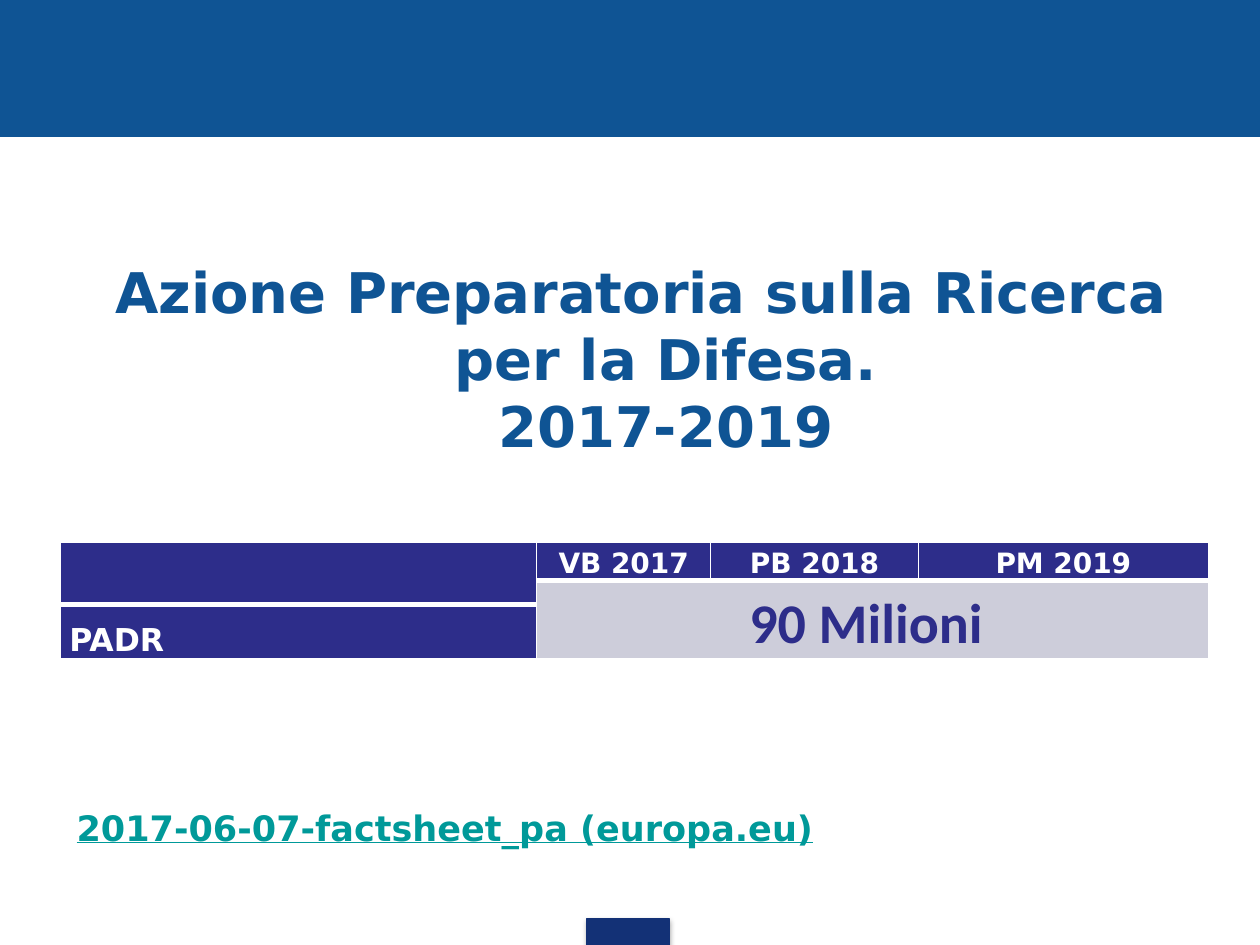
import pptx
import pptx.dml.color
import pptx.enum.shapes
import pptx.enum.text
import pptx.oxml
import pptx.oxml.ns
import pptx.util

Inches = pptx.util.Inches
Pt = pptx.util.Pt
RGBColor = pptx.dml.color.RGBColor
PP_ALIGN = pptx.enum.text.PP_ALIGN
MSO_ANCHOR = pptx.enum.text.MSO_ANCHOR

BLUE = RGBColor(0x0F, 0x54, 0x94)
NAVY = RGBColor(0x13, 0x31, 0x76)
INDIGO = RGBColor(0x2D, 0x2D, 0x8A)
LILAC = RGBColor(0xCD, 0xCD, 0xDA)
TEAL = RGBColor(0x00, 0x99, 0x99)
WHITE = RGBColor(0xFF, 0xFF, 0xFF)

HEADING_FONT = "DejaVu Sans"
AMOUNT_FONT = "Calibri"
NAMESPACE = pptx.oxml.ns.nsdecls("a")


class SlideBuilder:
    def __init__(self, slide):
        self.slide = slide

    def run(self, paragraph, text, size, color, font=HEADING_FONT, underline=None):
        run = paragraph.add_run()
        run.text = text
        run.font.name = font
        run.font.size = Pt(size)
        run.font.bold = True
        run.font.underline = underline
        run.font.color.rgb = color

    def block(self, left, top, width, height, color):
        block = self.slide.shapes.add_shape(
            pptx.enum.shapes.MSO_SHAPE.RECTANGLE,
            Inches(left), Inches(top), Inches(width), Inches(height))
        block.shadow.inherit = False
        block.fill.solid()
        block.fill.fore_color.rgb = color
        block.line.color.rgb = color
        block.line.width = Pt(0.75)
        return block

    def drop_shadow(self, block):
        effects = block._element.spPr.find(pptx.oxml.ns.qn("a:effectLst"))
        effects.append(pptx.oxml.parse_xml(
            f'<a:outerShdw {NAMESPACE} blurRad="{Pt(3.1)}" dist="{Pt(1.8)}" '
            'dir="5400000" rotWithShape="0"><a:srgbClr val="000000">'
            '<a:alpha val="35000"/></a:srgbClr></a:outerShdw>'))

    def title(self, lines, left, top, width, height):
        title = self.slide.shapes.title
        title.left, title.top = Inches(left), Inches(top)
        title.width, title.height = Inches(width), Inches(height)
        frame = title.text_frame
        frame.word_wrap = True
        frame.auto_size = pptx.enum.text.MSO_AUTO_SIZE.NONE
        frame.vertical_anchor = MSO_ANCHOR.MIDDLE
        paragraph = frame.paragraphs[0]
        paragraph.alignment = PP_ALIGN.CENTER
        hanging = paragraph._p.get_or_add_pPr()
        hanging.set("marL", str(Inches(0.39)))
        hanging.set("indent", str(-Inches(0.39)))
        for number, line in enumerate(lines):
            if number:
                paragraph.add_line_break()
            self.run(paragraph, line, 32, BLUE)

    def source(self, text, left, top, width, height):
        box = self.slide.shapes.add_textbox(
            Inches(left), Inches(top), Inches(width), Inches(height))
        box.text_frame.word_wrap = True
        self.run(box.text_frame.paragraphs[0], text, 20, TEAL, underline=True)

    def table(self, left, top, columns, rows):
        table = self.slide.shapes.add_table(
            len(rows), len(columns), Inches(left), Inches(top),
            Inches(sum(columns)), Inches(sum(rows))).table
        for column, width in zip(table.columns, columns):
            column.width = Inches(width)
        for row, height in zip(table.rows, rows):
            row.height = Inches(height)
        return table

    def cell_style(self, cell, color, top_width, bottom_width):
        cell.margin_left = cell.margin_right = Inches(0.07)
        cell.margin_top = cell.margin_bottom = 0
        cell.vertical_anchor = MSO_ANCHOR.BOTTOM
        borders = {"lnL": 1, "lnR": 1, "lnT": top_width, "lnB": bottom_width}
        for side, width in borders.items():
            cell._tc.get_or_add_tcPr().append(pptx.oxml.parse_xml(
                f'<a:{side} {NAMESPACE} w="{Pt(width)}"><a:solidFill>'
                f'<a:srgbClr val="{WHITE}"/></a:solidFill></a:{side}>'))
        cell.fill.solid()
        cell.fill.fore_color.rgb = color

    def cell_text(self, cell, text, size, color, align, font=HEADING_FONT):
        paragraph = cell.text_frame.paragraphs[0]
        paragraph.alignment = align
        paragraph.line_spacing = 1.15
        paragraph.space_after = Pt(10)
        self.run(paragraph, text, size, color, font)

    def shrink_empty(self, cell):
        """Keep an empty cell from forcing its row taller."""
        cell.text_frame.paragraphs[0]._p.append(
            pptx.oxml.parse_xml(f'<a:endParaRPr {NAMESPACE} sz="100"/>'))


def budget_table(builder):
    table = builder.table(0.48, 4.3, [3.78, 1.38, 1.65, 2.3], [0.29, 0.19, 0.43])
    for row in range(3):
        for column in range(4):
            is_amount = row > 0 and column > 0
            is_header_end = row == (1 if column == 0 else 0)
            is_body_start = row == (2 if column == 0 else 1)
            builder.cell_style(table.cell(row, column),
                               LILAC if is_amount else INDIGO,
                               3 if is_body_start else 1,
                               3 if is_header_end else 1)
    table.cell(0, 0).merge(table.cell(1, 0))
    table.cell(1, 1).merge(table.cell(2, 3))

    for column, year in enumerate(["VB 2017", "PB 2018", "PM 2019"], start=1):
        builder.cell_text(table.cell(0, column), year, 16, WHITE, PP_ALIGN.CENTER)
    builder.cell_text(table.cell(1, 1), "90 Milioni ", 32, INDIGO,
                      PP_ALIGN.CENTER, AMOUNT_FONT)
    builder.cell_text(table.cell(2, 0), "PADR", 18, WHITE, PP_ALIGN.LEFT)
    for cell in table.iter_cells():
        if not cell.text:
            builder.shrink_empty(cell)


def main():
    deck = pptx.Presentation()
    deck.slide_width, deck.slide_height = Inches(10), Inches(7.5)
    builder = SlideBuilder(deck.slides.add_slide(deck.slide_layouts[5]))

    builder.block(0, 0, 10, 1.08, BLUE)
    footer_tab = builder.block(4.66, 7.29, 0.65, 0.21, NAVY)
    builder.drop_shadow(footer_tab)
    builder.title(["Azione Preparatoria sulla Ricerca per la Difesa.", "2017-2019"],
                  0.59, 2.33, 9, 1.02)
    builder.source("2017-06-07-factsheet_pa (europa.eu)", 0.51, 6.35, 8.9, 0.44)
    budget_table(builder)

    deck.save("out.pptx")


if __name__ == "__main__":
    main()
